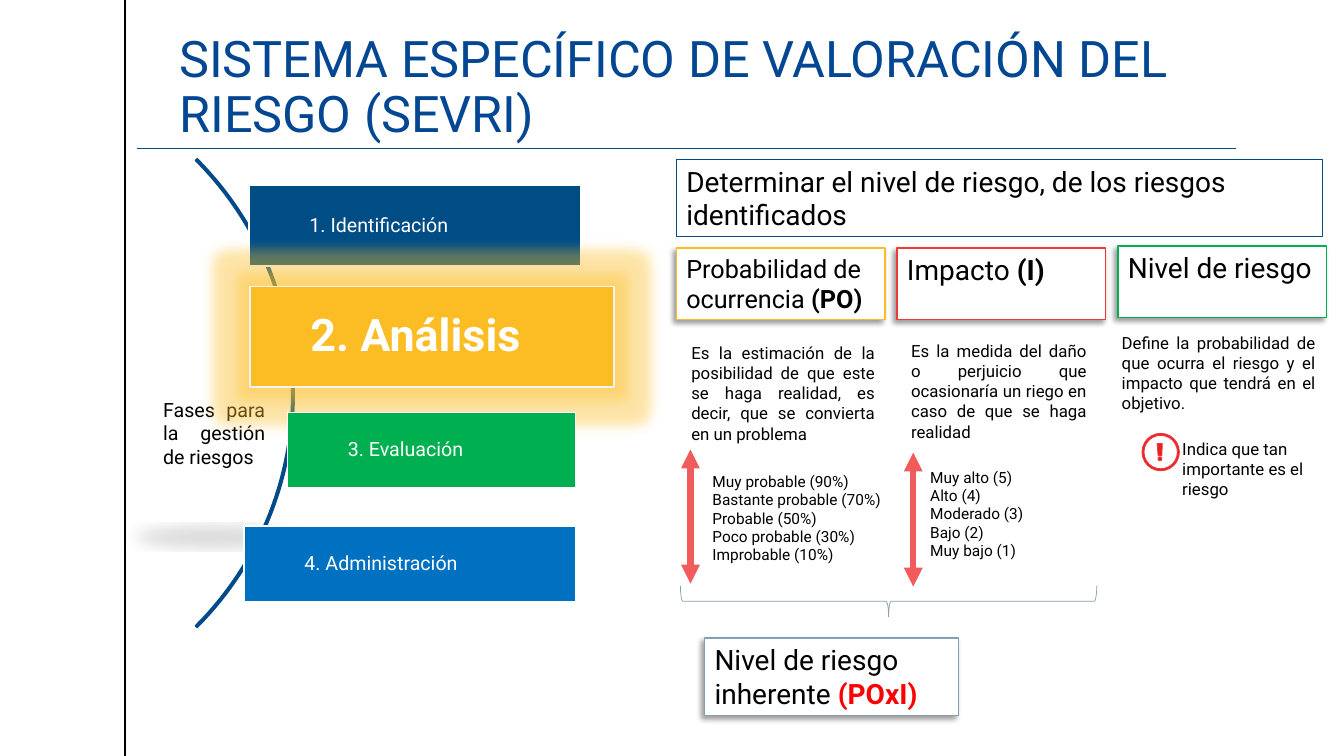
from dataclasses import dataclass
from typing import NamedTuple, Optional

from lxml import etree
from pptx import Presentation, util as u
from pptx.dml.color import RGBColor
from pptx.enum import shapes as es, text as et
from pptx.oxml import ns

COLS, ROWS = 160, 90
WIDE, HIGH = u.Inches(13.33), u.Inches(7.5)


@dataclass(frozen=True)
class Theme:
    font: str = "Roboto"
    ink: str = "000000"
    white: str = "FFFFFF"
    title: str = "034793"
    navy: str = "004D86"
    gold: str = "FCBD24"
    pale: str = "F2F2F2"
    green: str = "00B050"
    blue: str = "0070C0"
    red: str = "EC3A3B"
    icon: str = "EC1D24"
    arrow: str = "F15B5C"
    alert: str = "FF0000"
    slate: str = "869FB2"
    huge: int = 36
    big: int = 32
    head: int = 20
    sub: int = 18
    step: int = 14
    body: int = 12
    small: int = 11


T = Theme()


class Box(NamedTuple):
    col: float
    row: float
    cols: float
    rows: float


class Step(NamedTuple):
    label: str
    box: Box
    fill: str
    edge: str = T.white
    size: int = T.step
    bold: bool = False


class Topic(NamedTuple):
    head: str
    code: str
    size: int
    edge: str
    row: float
    note: str
    place: Box


class Scale(NamedTuple):
    place: Box
    levels: tuple
    col: float
    row: float


STEPS = (
    Step("1. Identificación", Box(29.64, 22.08, 39.48, 9.6), T.navy),
    Step("2. Análisis", Box(29.76, 34.08, 43.32, 12), T.gold, T.pale, T.big, True),
    Step("3. Evaluación", Box(34.2, 49.08, 34.32, 9), T.green),
    Step("4. Administración", Box(29.04, 62.64, 39.48, 9), T.blue),
)
TOPICS = (
    Topic("Probabilidad de ocurrencia ", "(PO)", T.sub, T.gold, 29.52,
          "Es la estimación de la posibilidad de que este se haga realidad, "
          "es decir, que se convierta en un problema", Box(81.12, 40.2, 24.24, 13.32)),
    Topic("Impacto ", "(I)", T.head, T.red, 29.52,
          "Es la medida del daño o perjuicio que ocasionaría un riego en caso "
          "de que se haga realidad", Box(107.28, 39.96, 23.28, 13.32)),
    Topic("Nivel de riesgo", "", T.head, T.green, 29.28,
          "Define la probabilidad de que ocurra el riesgo y el impacto que "
          "tendrá en el objetivo.", Box(132.36, 39, 25.44, 10.92)),
)
SCALES = (
    Scale(Box(83.64, 55.56, 24.24, 12.36),
          ("Muy probable (90%)", "Bastante probable (70%)", "Probable (50%)",
           "Poco probable (30%)", "Improbable (10%)"), 82.2, 53.52),
    Scale(Box(109.56, 55.08, 13.92, 12.36),
          ("Muy alto (5)", "Alto (4)", "Moderado (3)", "Bajo (2)", "Muy bajo (1)"),
          108.72, 53.88),
)

deck = Presentation()
deck.slide_width, deck.slide_height = WIDE, HIGH
page = deck.slides.add_slide(deck.slide_layouts[6])


def across(col: float) -> int:
    return round(col * WIDE / COLS)


def down(row: float) -> int:
    return round(row * HIGH / ROWS)


def spot(box: Box) -> tuple:
    return across(box.col), down(box.row), across(box.cols), down(box.rows)


def rgb(color: str) -> RGBColor:
    return RGBColor.from_string(color)


def paint(item, fill: Optional[str], edge: Optional[str], width: float = 1):
    item.shadow.inherit = False
    if fill:
        item.fill.solid()
        item.fill.fore_color.rgb = rgb(fill)
    else:
        item.fill.background()
    if edge:
        item.line.color.rgb = rgb(edge)
        item.line.width = u.Pt(width)
    else:
        item.line.fill.background()
    return item


def draw(kind, box: Box, fill: Optional[str] = None, edge: Optional[str] = None,
         width: float = 1, adjust: tuple = ()):
    item = page.shapes.add_shape(kind, *spot(box))
    for place, value in enumerate(adjust):
        item.adjustments[place] = value
    return paint(item, fill, edge, width)


def effect(item, kind: str, color: str, alpha: int, **attrs) -> None:
    group = item._element.spPr.find(ns.qn("a:effectLst"))
    node = etree.SubElement(group, ns.qn(f"a:{kind}"),
                            {key: str(value) for key, value in attrs.items()})
    tint = etree.SubElement(node, ns.qn("a:srgbClr"), val=color)
    etree.SubElement(tint, ns.qn("a:alpha"), val=str(alpha * 1000))


def drop(item) -> None:
    effect(item, "outerShdw", T.ink, 40, blurRad=u.Pt(4), dist=u.Pt(3),
           dir=135 * 60000, algn="tr", rotWithShape=0)


def write(text: str, box: Optional[Box] = None, item=None, size: int = T.body,
          color: str = T.ink, bold: bool = False, tail: str = "",
          tint: str = T.ink, align=et.PP_ALIGN.LEFT, anchor=et.MSO_ANCHOR.TOP,
          pads: tuple = (0.1, 0.05, 0.1, 0.05), pitch: float = 1) -> None:
    if item is None:
        item = page.shapes.add_textbox(*spot(box))
    frame = item.text_frame
    frame.word_wrap = True
    frame.vertical_anchor = anchor
    (frame.margin_left, frame.margin_top,
     frame.margin_right, frame.margin_bottom) = map(u.Inches, pads)
    for count, words in enumerate(text.split("\n")):
        para = frame.paragraphs[0] if count == 0 else frame.add_paragraph()
        para.alignment, para.line_spacing = align, pitch
        for part, shade, heavy in ((words, color, bold), (tail, tint, True)):
            if part:
                run = para.add_run()
                run.text = part
                run.font.name, run.font.size = T.font, u.Pt(size)
                run.font.bold, run.font.color.rgb = heavy, rgb(shade)


def link(start: tuple, end: tuple, color: str, width: float, heads: bool = False) -> None:
    item = page.shapes.add_connector(es.MSO_CONNECTOR.STRAIGHT,
                                     across(start[0]), down(start[1]),
                                     across(end[0]), down(end[1]))
    item.line.color.rgb, item.line.width = rgb(color), u.Pt(width)
    etree.SubElement(item._element.spPr, ns.qn("a:effectLst"))
    if heads:
        for end_tag in ("headEnd", "tailEnd"):
            etree.SubElement(item.line._get_or_add_ln(), ns.qn(f"a:{end_tag}"),
                             type="triangle")


def phases() -> None:
    oval = draw(es.MSO_SHAPE.OVAL, Box(15.24, 44.76, 20.52, 13.68), T.white)
    effect(oval, "outerShdw", T.ink, 15, blurRad=u.Pt(12), dist=u.Pt(25),
           dir=90 * 60000, sx=90000, sy=-19000, rotWithShape=0)
    write("Fases para la gestión de riesgos", item=oval, size=T.step,
          align=et.PP_ALIGN.JUSTIFY)
    draw(es.MSO_SHAPE.BLOCK_ARC, Box(-43.92, 7.32, 78.96, 78.96), T.title, T.navy,
         adjust=(189, 27, 0.004))
    for step in STEPS:
        item = draw(es.MSO_SHAPE.RECTANGLE, step.box, step.fill, step.edge)
        if step.bold:
            effect(item, "glow", T.gold, 40, rad=u.Pt(18))
        write(step.label, item=item, size=step.size, color=T.white, bold=step.bold,
              anchor=et.MSO_ANCHOR.MIDDLE, pads=(0.6, 0.04, 0.04, 0.04), pitch=0.9)


def topics() -> None:
    goal = draw(es.MSO_SHAPE.RECTANGLE, Box(80.52, 18.96, 76.92, 9.24), None, T.navy, 0.75)
    write("Determinar el nivel de riesgo, de los riesgos identificados",
          item=goal, size=T.head)
    for place, topic in enumerate(TOPICS):
        item = draw(es.MSO_SHAPE.RECTANGLE,
                    Box(80.52 + place * 26.28, topic.row, 24.84, 8.52), T.white, topic.edge)
        drop(item)
        write(topic.head, item=item, size=topic.size, tail=topic.code)
        write(topic.note, topic.place, align=et.PP_ALIGN.JUSTIFY)
    for scale in SCALES:
        link((scale.col, scale.row), (scale.col, scale.row + 15.96), T.arrow, 4.5, True)
        write("\n".join(scale.levels), scale.place, size=T.small)


def result() -> None:
    brace = draw(es.MSO_SHAPE.RIGHT_BRACE, Box(103.92, 46.8, 3.72, 49.56), None, T.slate, 0.5)
    brace.rotation = 90
    item = draw(es.MSO_SHAPE.RECTANGLE, Box(83.88, 75.96, 30.24, 9.24), T.white, T.slate)
    drop(item)
    write("Nivel de riesgo inherente ", item=item, size=T.head, tail="(POxI)", tint=T.alert)


def warning() -> None:
    write("Indica que tan importante es el riesgo", Box(139.56, 51.6, 17.52, 8.52))
    draw(es.MSO_SHAPE.DONUT, Box(135.96, 51.6, 4.44, 4.44), T.icon, T.red, 0.75, (0.05,))
    points = [(across(col), down(row)) for col, row in
              ((137.76, 52.8), (138.36, 52.8), (138.3, 54.24), (137.88, 54.24))]
    mark = page.shapes.build_freeform(*points[0])
    mark.add_line_segments(points[1:], close=True)
    paint(mark.convert_to_shape(), T.icon, T.red, 0.75)
    draw(es.MSO_SHAPE.OVAL, Box(137.86, 54.4, 0.45, 0.45), T.icon, T.red, 0.75)


def main() -> None:
    link((14.88, 0), (14.88, ROWS), T.ink, 1)
    phases()
    write("SISTEMA ESPECÍFICO DE VALORACIÓN DEL RIESGO (SEVRI)",
          Box(21.36, 4.44, 132.96, 13.2), size=T.huge, color=T.title,
          anchor=et.MSO_ANCHOR.BOTTOM, pads=(0, 0.05, 0, 0.05), pitch=0.9)
    link((16.32, 17.64), (147.12, 17.64), T.navy, 0.5)
    topics()
    result()
    warning()
    deck.save("out.pptx")


if __name__ == "__main__":
    main()
